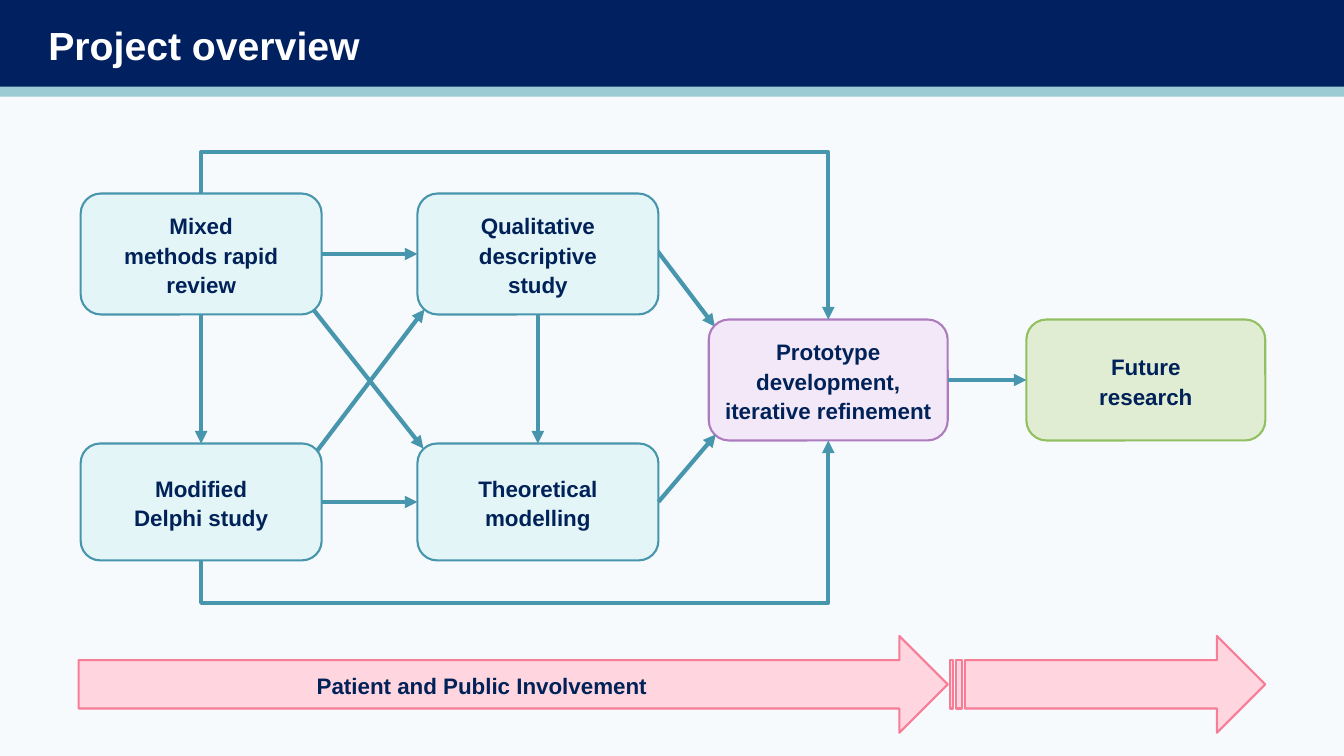
"""Build the project overview slide."""
from dataclasses import dataclass

from lxml.etree import SubElement
from pptx import Presentation
from pptx.dml.color import RGBColor
from pptx.enum.shapes import MSO_CONNECTOR as CONN, MSO_SHAPE as SHAPE
from pptx.enum.text import MSO_ANCHOR as ANCHOR, PP_ALIGN as ALIGN
from pptx.oxml.ns import qn
from pptx.util import Inches, Pt


@dataclass(frozen=True)
class Theme:
    """Colours, font and sizes."""
    font: str = "Arial"
    title_size: float = 28
    text_size: float = 16
    outline: float = 1.5
    arrow: float = 3
    back: str = "F6FAFC"
    navy: str = "002060"
    band: str = "9CCBD4"
    white: str = "FFFFFF"
    text: str = "002258"
    teal: str = "4896AE"
    study: tuple = ("E4F5F8", "4896AE")
    prototype: tuple = ("F2E8F8", "AE7CBE")
    future: tuple = ("E1EDD3", "92C060")
    involvement: tuple = ("FFD5DF", "F77D97")


T = Theme()
TOP, BOTTOM, RIGHT, LEFT = 0, 2, 3, 1
TITLE = "Project overview"
BANDS = [(0, 0.87, T.navy), (0.86, 0.1, T.band)]
BOXES = {
    "review": (["Mixed methods rapid", "review"], (0.8, 1.92, 2.39, 1.2), T.study, 0.35),
    "delphi": (["Modified Delphi study"], (0.8, 4.4, 2.39, 1.16), T.study, 0.41),
    "theory": (["Theoretical modelling"], (4.14, 4.4, 2.39, 1.16), T.study, 0.1),
    "qualitative": (["Qualitative descriptive study"], (4.14, 1.92, 2.39, 1.2), T.study, 0.31),
    "prototype": (["Prototype development, iterative refinement"],
                  (7.03, 3.17, 2.37, 1.2), T.prototype, 0.05),
    "future": (["Future", "research"], (10.18, 3.17, 2.37, 1.2), T.future, 0.3),
}
DIAGONALS = [
    (3.02, 2.96, 4.2, 4.45),
    (3.14, 4.48, 4.21, 3.07),
    (6.46, 2.41, 7.09, 3.24),
]
LINKS = [
    ("review", RIGHT, "qualitative", LEFT),
    ("delphi", RIGHT, "theory", LEFT),
    ("review", BOTTOM, "delphi", TOP),
    ("qualitative", BOTTOM, "theory", TOP),
    ("prototype", RIGHT, "future", LEFT),
]
THEORY_TO_PROTOTYPE = (6.53, 4.98, 7.1, 4.31)
DETOURS = [("review", TOP, 1.51), ("delphi", BOTTOM, 5.98)]
INVOLVEMENT = [
    (["Patient and Public Involvement"], SHAPE.RIGHT_ARROW, (0.78, 6.31, 8.62, 0.96), 0.48),
    ([], SHAPE.STRIPED_RIGHT_ARROW, (9.42, 6.31, 3.13, 0.96), 0.1),
]


def rgb(color):
    """Turn a hex string into a colour."""
    return RGBColor.from_string(color)


def write(tf, lines, size=T.text_size, color=T.text, align=ALIGN.CENTER,
          spacing=1.1, left=0.1, right=0.1):
    """Fill a text frame with bold paragraphs."""
    tf.word_wrap = True
    tf.vertical_anchor = ANCHOR.MIDDLE
    tf.margin_left, tf.margin_right = Inches(left), Inches(right)
    tf.margin_top = tf.margin_bottom = Inches(0.05)
    for i, line in enumerate(lines):
        p = tf.add_paragraph() if i else tf.paragraphs[0]
        p.alignment, p.line_spacing = align, spacing
        p.space_before = Pt(0)
        r = p.add_run()
        r.text = line
        r.font.name, r.font.size, r.font.bold = T.font, Pt(size), True
        r.font.color.rgb = rgb(color)


def add_shape(s, kind, at, fill, line=None):
    """Add a flat preset shape."""
    sp = s.shapes.add_shape(kind, *map(Inches, at))
    sp.shadow.inherit = False
    sp.fill.solid()
    sp.fill.fore_color.rgb = rgb(fill)
    if line:
        sp.line.color.rgb = rgb(line)
        sp.line.width = Pt(T.outline)
    else:
        sp.line.fill.background()
    return sp


def add_arrow(s, ends, kind=CONN.STRAIGHT):
    """Add a teal arrow between two points."""
    c = s.shapes.add_connector(kind, *map(Inches, ends))
    c.line.color.rgb = rgb(T.teal)
    c.line.width = Pt(T.arrow)
    SubElement(c.line._get_or_add_ln(), qn("a:tailEnd"), type="triangle")
    SubElement(c._element.spPr, qn("a:effectLst"))
    return c


def add_detour(s, x1, y1, x2, y2, via):
    """Add an elbow arrow that leaves vertically and crosses at height via."""
    w, h = abs(y2 - y1), abs(x2 - x1)
    left, top = (x1 + x2 - w) / 2, (y1 + y2 - h) / 2
    c = add_arrow(s, (left, top, left + w, top + h), CONN.ELBOW)
    xfrm = c._element.spPr.find(qn("a:xfrm"))
    xfrm.set("flipH", "1")
    if y2 > y1:
        c.rotation = 270
        xfrm.set("rot", str(270 * 60000))
    else:
        xfrm.set("flipV", "1")
        xfrm.set("rot", str(90 * 60000))
    geom = c._element.spPr.find(qn("a:prstGeom"))
    guides = geom.find(qn("a:avLst"))
    if guides is None:
        guides = SubElement(geom, qn("a:avLst"))
    ratio = round((via - y1) / (y2 - y1) * 100000)
    SubElement(guides, qn("a:gd"), name="adj1", fmla=f"val {ratio}")


def main():
    """Assemble and save the slide."""
    prs = Presentation()
    prs.slide_width, prs.slide_height = Inches(13.33), Inches(7.5)
    s = prs.slides.add_slide(prs.slide_layouts[5])
    s.background.fill.solid()
    s.background.fill.fore_color.rgb = rgb(T.back)

    for top, height, color in BANDS:
        add_shape(s, SHAPE.RECTANGLE, (0, top, 13.33, height), color)
    title = s.shapes.title
    title._element.getparent().append(title._element)
    title.left, title.top, title.width, title.height = map(Inches, (0.38, 0.16, 12.77, 0.57))
    write(title.text_frame, [TITLE], size=T.title_size, color=T.white,
          align=ALIGN.LEFT, spacing=1.0)

    for ends in DIAGONALS:
        add_arrow(s, ends)
    boxes = {}
    for name, (lines, at, colors, margin) in BOXES.items():
        boxes[name] = add_shape(s, SHAPE.ROUNDED_RECTANGLE, at, *colors)
        write(boxes[name].text_frame, lines, left=margin, right=margin)

    for start, side, end, end_side in LINKS:
        c = add_arrow(s, (0, 0, 1, 1))
        c.begin_connect(boxes[start], side)
        c.end_connect(boxes[end], end_side)
    add_arrow(s, THEORY_TO_PROTOTYPE).begin_connect(boxes["theory"], RIGHT)

    px, py, pw, ph = BOXES["prototype"][1]
    for name, side, via in DETOURS:
        x, y, w, h = BOXES[name][1]
        drop = 0 if side == TOP else 1
        add_detour(s, x + w / 2, y + h * drop, px + pw / 2, py + ph * drop, via)

    for lines, kind, at, right in INVOLVEMENT:
        sp = add_shape(s, kind, at, *T.involvement)
        write(sp.text_frame, lines, right=right)
    prs.save("out.pptx")


if __name__ == "__main__":
    main()
